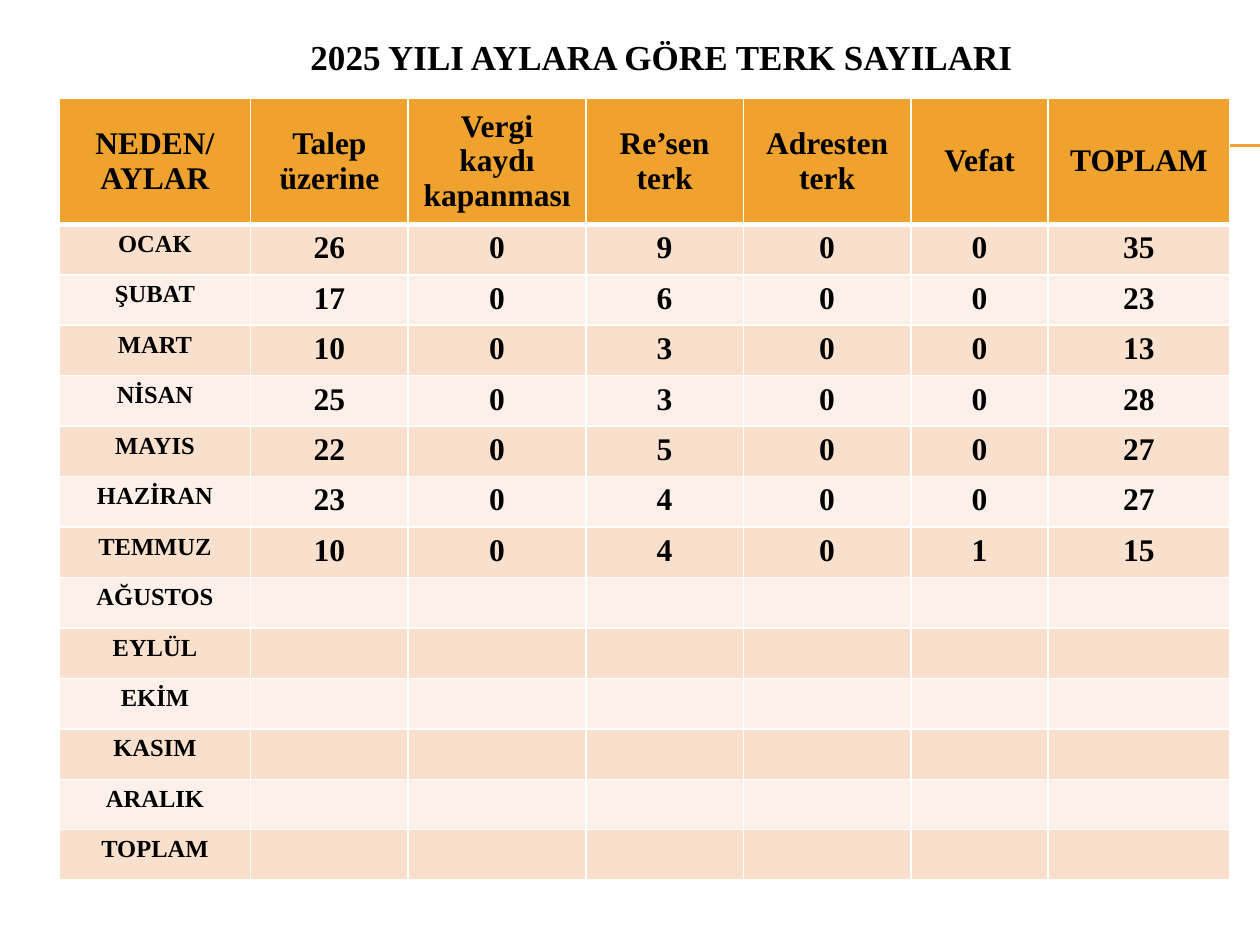
from dataclasses import dataclass

from lxml.etree import SubElement
from pptx import Presentation
from pptx.dml.color import RGBColor
from pptx.enum.shapes import MSO_CONNECTOR as Connector
from pptx.enum.text import MSO_ANCHOR as Anchor, PP_ALIGN as Align
from pptx.oxml.ns import qn
from pptx.util import Inches, Pt

COLORS = {
    "black": "000000",
    "white": "FFFFFF",
    "accent": "F0A22E",
    "band_dark": "F9E0CD",
    "band_light": "FCF0E8",
}
FONT = {"name": "Times New Roman", "bold": True}
HEADINGS = ["NEDEN/ AYLAR", "Talep üzerine", "Vergi kaydı kapanması", "Re’sen terk",
            "Adresten terk", "Vefat", "TOPLAM"]
COLUMN_WIDTHS = [1.52, 1.25, 1.41, 1.25, 1.33, 1.09, 1.44]
HEADER_HEIGHT, ROW_HEIGHT = 0.98, 0.39


@dataclass
class MonthRow:
    label: str
    counts: tuple[int, ...] = ()


ROWS = [
    MonthRow("OCAK", (26, 0, 9, 0, 0, 35)),
    MonthRow("ŞUBAT", (17, 0, 6, 0, 0, 23)),
    MonthRow("MART", (10, 0, 3, 0, 0, 13)),
    MonthRow("NİSAN", (25, 0, 3, 0, 0, 28)),
    MonthRow("MAYIS", (22, 0, 5, 0, 0, 27)),
    MonthRow("HAZİRAN", (23, 0, 4, 0, 0, 27)),
    MonthRow("TEMMUZ", (10, 0, 4, 0, 1, 15)),
    MonthRow("AĞUSTOS"),
    MonthRow("EYLÜL"),
    MonthRow("EKİM"),
    MonthRow("KASIM"),
    MonthRow("ARALIK"),
    MonthRow("TOPLAM"),
]


def color(name: str) -> RGBColor:
    return RGBColor.from_string(COLORS[name])


def write_text(frame, text: str, size: int) -> None:
    para = frame.paragraphs[0]
    para.alignment = Align.CENTER
    span = para.add_run()
    span.text = text
    for key, value in {**FONT, "size": Pt(size)}.items():
        setattr(span.font, key, value)
    span.font.color.rgb = color("black")


def add_rule(page, y: float) -> None:
    rule = page.shapes.add_connector(
        Connector.STRAIGHT, Inches(0.56), Inches(y), Inches(10), Inches(y))
    rule.line.color.rgb = color("accent")
    rule.line.width = Pt(0.75)
    SubElement(rule._element.spPr, qn("a:effectLst"))


def add_title(page, text: str) -> None:
    box = page.shapes.add_textbox(Inches(0.5), Inches(0.21), Inches(9.5), Inches(0.57))
    frame = box.text_frame
    settings = {"word_wrap": True, "vertical_anchor": Anchor.TOP, "margin_top": Inches(0.07)}
    for key, value in settings.items():
        setattr(frame, key, value)
    write_text(frame, text, 20)


def set_borders(cell, top: float = 1, bottom: float = 1) -> None:
    properties = cell._tc.get_or_add_tcPr()
    for side, width in {"L": 1, "R": 1, "T": top, "B": bottom}.items():
        line = SubElement(properties, qn(f"a:ln{side}"), w=str(Pt(width)))
        fill = SubElement(line, qn("a:solidFill"))
        SubElement(fill, qn("a:srgbClr"), val=COLORS["white"])


def style_cell(cell, fill: str, top: float = 1, bottom: float = 1) -> None:
    set_borders(cell, top, bottom)
    cell.fill.solid()
    cell.fill.fore_color.rgb = color(fill)


def add_month_table(page) -> None:
    height = HEADER_HEIGHT + ROW_HEIGHT * len(ROWS)
    table = page.shapes.add_table(
        len(ROWS) + 1, len(HEADINGS), Inches(0.47), Inches(0.78),
        Inches(sum(COLUMN_WIDTHS)), Inches(height)).table
    for column, width in zip(table.columns, COLUMN_WIDTHS):
        column.width = Inches(width)
    for index, row in enumerate(table.rows):
        row.height = Inches(ROW_HEIGHT if index else HEADER_HEIGHT)

    # Header row
    for index, heading in enumerate(HEADINGS):
        cell = table.cell(0, index)
        style_cell(cell, "accent", bottom=3)
        cell.vertical_anchor = Anchor.MIDDLE
        write_text(cell.text_frame, heading, 18)

    # Banded month rows
    for number, month in enumerate(ROWS, start=1):
        for cell in table.rows[number].cells:
            style_cell(cell, "band_dark" if number % 2 else "band_light",
                       top=3 if number == 1 else 1)
        write_text(table.cell(number, 0).text_frame, month.label, 14)
        for index, count in enumerate(month.counts, start=1):
            write_text(table.cell(number, index).text_frame, str(count), 18)


def main() -> None:
    deck = Presentation()
    deck.slide_width, deck.slide_height = Inches(10), Inches(7.5)
    page = deck.slides.add_slide(deck.slide_layouts[6])

    # Double rule behind the table
    for y in (1.15, 1.16):
        add_rule(page, y)
    add_title(page, "2025 YILI AYLARA GÖRE TERK SAYILARI")
    add_month_table(page)
    deck.save("out.pptx")


if __name__ == "__main__":
    main()
